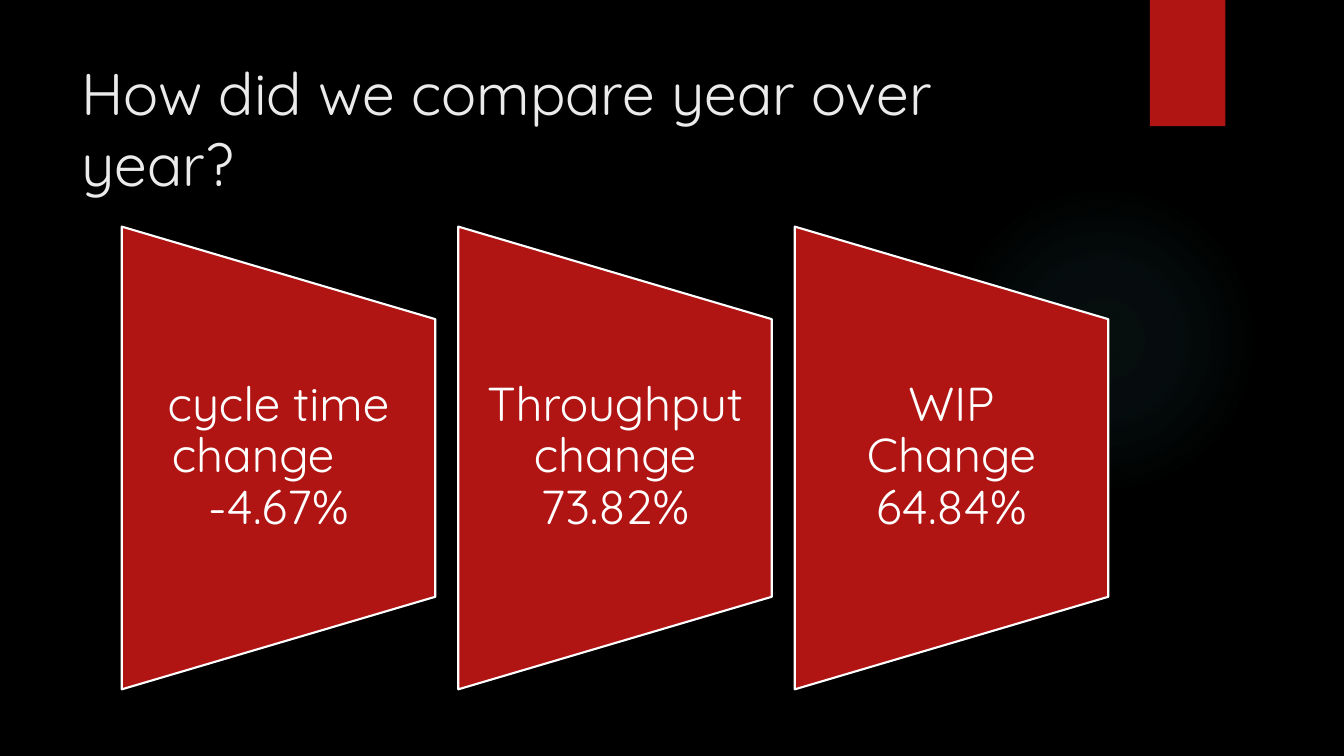
import pptx
import pptx.util
import pptx.dml.color
import pptx.enum.shapes
import pptx.enum.text
import lxml.etree

Cm = pptx.util.Cm
Shape = pptx.enum.shapes.MSO_SHAPE
Align = pptx.enum.text.PP_ALIGN
Anchor = pptx.enum.text.MSO_ANCHOR
NS = "http://schemas.openxmlformats.org/drawingml/2006/main"


def color(code):
    return pptx.dml.color.RGBColor.from_string(code)


class Deck:
    """Holds the style and the current slide, and draws each kind of element."""

    font = "Quicksand"
    red = "B01513"
    white = "FFFFFF"

    def __init__(self):
        self.show = pptx.Presentation()
        self.show.slide_width = Cm(33.87)
        self.show.slide_height = Cm(19.05)
        self.slide = self.show.slides.add_slide(self.show.slide_layouts[6])
        back = self.slide.background.fill
        back.solid()
        back.fore_color.rgb = color("000000")

    def block(self, kind, x, y, w, h, line=None, turn=0):
        item = self.slide.shapes.add_shape(kind, Cm(x), Cm(y), Cm(w), Cm(h))
        item.shadow.inherit = False
        item.rotation = turn
        item.fill.solid()
        item.fill.fore_color.rgb = color(self.red)
        if line:
            item.line.color.rgb = color(line)
            item.line.width = pptx.util.Pt(1.5)
        else:
            item.line.fill.background()
        return item

    def glow(self, x, y, size, tint, stops):
        item = self.block(Shape.OVAL, x, y, size, size)
        marks = "".join(
            f'<a:gs pos="{pos * 1000}"><a:srgbClr val="{tint}">'
            f'<a:alpha val="{alpha * 1000}"/></a:srgbClr></a:gs>'
            for pos, alpha in stops)
        grad = lxml.etree.fromstring(
            f'<a:gradFill xmlns:a="{NS}" rotWithShape="1"><a:gsLst>{marks}</a:gsLst>'
            '<a:path path="circle"><a:fillToRect l="50000" t="50000" '
            'r="50000" b="50000"/></a:path></a:gradFill>')
        props = item.element.spPr
        solid = props.find(f"{{{NS}}}solidFill")
        props.replace(solid, grad)

    def text(self, x, y, w, h, lines, size, tint, pad, space=None, align=Align.LEFT):
        frame = self.slide.shapes.add_textbox(Cm(x), Cm(y), Cm(w), Cm(h)).text_frame
        frame.word_wrap = True
        frame.vertical_anchor = Anchor.MIDDLE
        frame.margin_left = frame.margin_right = Cm(pad)
        frame.margin_top = frame.margin_bottom = 0
        for i, (words, dent) in enumerate(lines):
            para = frame.add_paragraph() if i else frame.paragraphs[0]
            para.alignment = Align.LEFT if dent else align
            if dent:
                para._p.get_or_add_pPr().set("marL", str(Cm(dent)))
            if space:
                para.line_spacing = space
            run = para.add_run()
            run.text = words
            run.font.name = self.font
            run.font.size = pptx.util.Pt(size)
            run.font.color.rgb = color(tint)

    def card(self, x, lines):
        self.block(Shape.FLOWCHART_MANUAL_OPERATION, x - 1.88, 7.59, 11.66, 7.9,
                   self.white, 270)
        self.text(x, 8.03, 7.9, 6.99, lines, 34, self.white, 0.61, 0.9, Align.CENTER)


def main():
    deck = Deck()
    deck.glow(23.9, 4.65, 7.82, "50B9C1", [(0, 7), (36, 6), (69, 0)])
    deck.block(Shape.RECTANGLE, 28.98, 0, 1.9, 3.18)
    deck.text(1.8, 1.27, 26.14, 3.89, [("How did we compare year over year?", 0)],
              42, "EBEBEB", 0.25)
    cards = [
        [("cycle time", 0), ("change", 0.65), ("-4.67%", 0)],
        [("Throughput change 73.82%", 0)],
        [("WIP Change 64.84%", 0)],
    ]
    for i, lines in enumerate(cards):
        deck.card(3.07 + i * 8.48, lines)
    deck.show.save("out.pptx")


if __name__ == "__main__":
    main()
